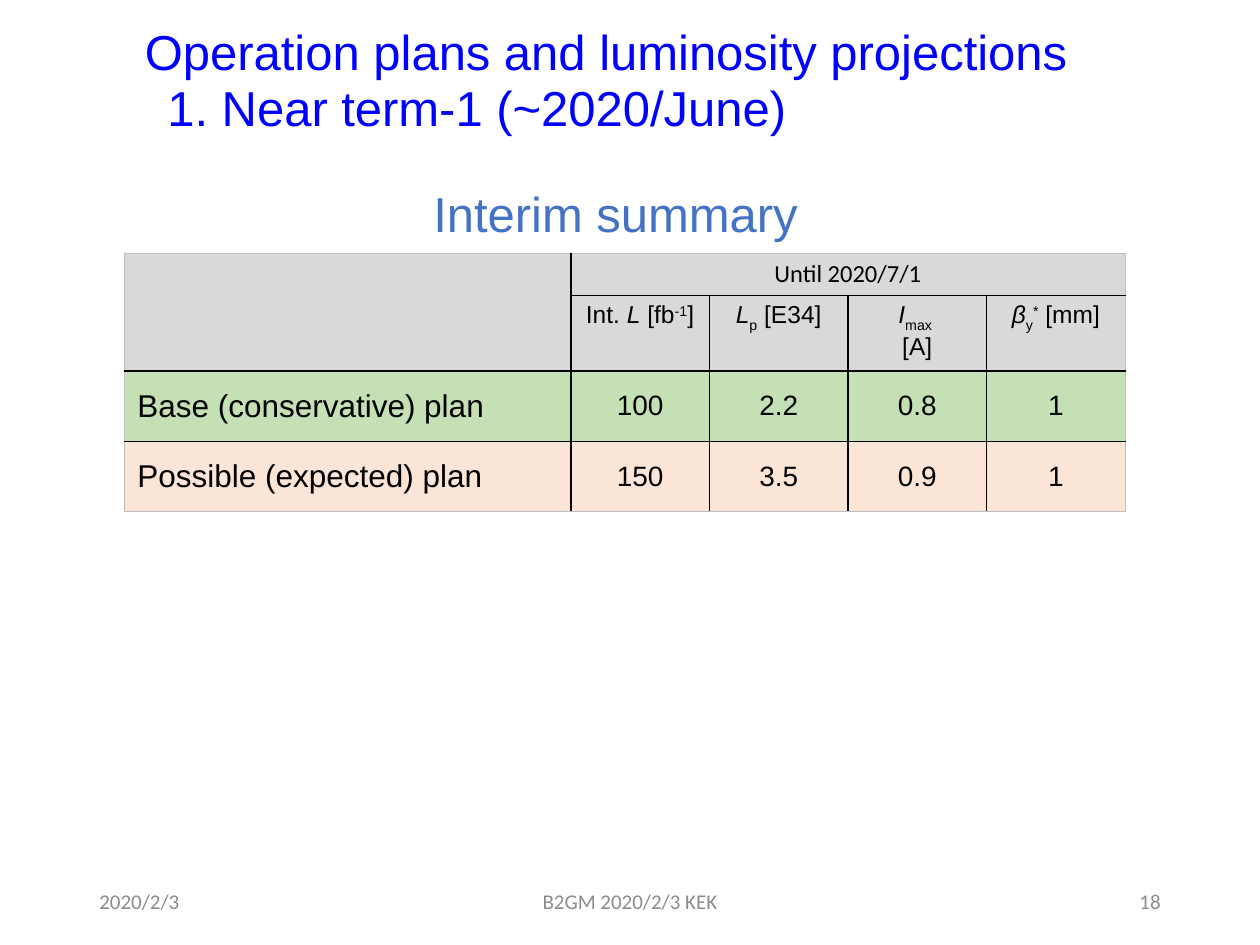
import pptx
import pptx.dml.color
import pptx.enum.text
import pptx.oxml
import pptx.oxml.ns
import pptx.util
from pptx.util import Inches

RGB = pptx.dml.color.RGBColor
ALIGN = pptx.enum.text.PP_ALIGN
ANCHOR = pptx.enum.text.MSO_ANCHOR

BLUE = RGB(0x00, 0x00, 0xFF)
STEEL = RGB(0x44, 0x72, 0xC4)
BLACK = RGB(0x00, 0x00, 0x00)
MUTED = RGB(0x8C, 0x8C, 0x8C)
EDGE = RGB(0xBF, 0xBF, 0xBF)
HEAD = RGB(0xD9, 0xD9, 0xD9)
GREEN = RGB(0xC5, 0xE0, 0xB4)
PEACH = RGB(0xFB, 0xE5, 0xD6)

SUB, SUP = -25000, 30000

# Each heading is a list of paragraphs; each paragraph a list of (text, style).
HEADS = [
    [[("Int. ", None), ("L", "i"), (" [fb", None), ("-1", SUP), ("]", None)]],
    [[("L", "i"), ("p", SUB), (" [E34]", None)]],
    [[("I", "i"), ("max ", SUB)], [("[A]", None)]],
    [[("β", "i"), ("y", SUB), ("*", SUP), (" [mm]", None)]],
]
PLANS = [
    (GREEN, "Base (conservative) plan", ["100", "2.2", "0.8", "1"]),
    (PEACH, "Possible (expected) plan", ["150", "3.5", "0.9", "1"]),
]


class Deck:
    def __init__(self):
        self.prs = pptx.Presentation()
        self.prs.slide_width = Inches(10)
        self.prs.slide_height = Inches(7.5)
        self.slide = self.prs.slides.add_slide(self.prs.slide_layouts[5])

    def style(self, font, size, color, face="Arial"):
        font.name = face
        font.size = pptx.util.Pt(size)
        font.color.rgb = color

    def label(self, frame, text, size, color, face="Arial",
              align=ALIGN.LEFT, anchor=ANCHOR.TOP):
        frame.text = text
        frame.word_wrap = True
        frame.vertical_anchor = anchor
        para = frame.paragraphs[0]
        para.alignment = align
        self.style(para.runs[0].font, size, color, face)

    def title(self, text, left, top, width, height):
        shape = self.slide.shapes.title
        shape.left, shape.top = Inches(left), Inches(top)
        shape.width, shape.height = Inches(width), Inches(height)
        self.label(shape.text_frame, text, 28, BLUE)
        shape.text_frame.auto_size = pptx.enum.text.MSO_AUTO_SIZE.NONE

    def text(self, text, left, top, width, height, size, color, **look):
        box = self.slide.shapes.add_textbox(
            Inches(left), Inches(top), Inches(width), Inches(height))
        self.label(box.text_frame, text, size, color, **look)

    def table(self, left, top, cols, rows):
        frame = self.slide.shapes.add_table(
            len(rows), len(cols), Inches(left), Inches(top),
            Inches(sum(cols)), Inches(sum(rows)))
        grid = frame.table
        grid.first_row = grid.horz_banding = False
        for col, width in zip(grid.columns, cols):
            col.width = Inches(width)
        for row, height in zip(grid.rows, rows):
            row.height = Inches(height)
        return grid

    def cell(self, cell, text, size, face="Arial", align=ALIGN.CENTER,
             anchor=ANCHOR.MIDDLE):
        cell.text = text
        cell.vertical_anchor = anchor
        para = cell.text_frame.paragraphs[0]
        para.alignment = align
        self.style(para.runs[0].font, size, BLACK, face)

    def symbol(self, cell, paras):
        """Fill a cell with italic symbols and raised or lowered indices."""
        frame = cell.text_frame
        for num, parts in enumerate(paras):
            para = frame.add_paragraph() if num else frame.paragraphs[0]
            para.alignment = ALIGN.CENTER
            for text, mark in parts:
                run = para.add_run()
                run.text = text
                self.style(run.font, 14, BLACK)
                if mark == "i":
                    run.font.italic = True
                elif mark:
                    run._r.get_or_add_rPr().set("baseline", str(mark))

    def rule(self, grid, fills):
        """Draw black inner and pale outer lines, then fill each row."""
        last_row, last_col = len(grid.rows), len(grid.columns)
        for r, fill in enumerate(fills):
            for c in range(last_col):
                cell = grid.cell(r, c)
                if not cell.is_spanned:
                    outer = {
                        "L": c == 0, "R": c + cell.span_width == last_col,
                        "T": r == 0, "B": r + cell.span_height == last_row}
                    for side, edge in outer.items():
                        self.line(cell, side, EDGE if edge else BLACK,
                                  0.5 if edge else 1)
                cell.fill.solid()
                cell.fill.fore_color.rgb = fill

    def line(self, cell, side, color, width):
        space = pptx.oxml.ns.nsdecls("a")
        cell._tc.get_or_add_tcPr().append(pptx.oxml.parse_xml(
            f'<a:ln{side} {space} w="{pptx.util.Pt(width)}"><a:solidFill>'
            f'<a:srgbClr val="{color}"/></a:solidFill></a:ln{side}>'))


def main():
    deck = Deck()
    deck.title("Operation plans and luminosity projections",
               1.05, 0.12, 7.65, 0.57)
    deck.text("1. Near term-1 (~2020/June)", 1.23, 0.57, 7.27, 0.57, 28, BLUE)
    deck.text("Interim summary", 3.34, 1.41, 3.61, 0.57, 28, STEEL)

    grid = deck.table(0.99, 2.01, [3.54] + [1.1] * 4, [0.33] + [0.56] * 3)
    grid.cell(0, 0).merge(grid.cell(1, 0))
    grid.cell(0, 1).merge(grid.cell(0, 4))
    deck.rule(grid, [HEAD, HEAD] + [plan[0] for plan in PLANS])
    deck.cell(grid.cell(0, 1), "Until 2020/7/1", 14, "Calibri",
              anchor=ANCHOR.TOP)
    for c, paras in enumerate(HEADS, 1):
        deck.symbol(grid.cell(1, c), paras)
    for r, (_, name, values) in enumerate(PLANS, 2):
        deck.cell(grid.cell(r, 0), name, 18, align=ALIGN.LEFT)
        for c, value in enumerate(values, 1):
            deck.cell(grid.cell(r, c), value, 16)

    for text, left, width, align in [
            ("2020/2/3", 0.69, 2.25, ALIGN.LEFT),
            ("B2GM 2020/2/3 KEK", 3.31, 3.38, ALIGN.CENTER),
            ("18", 7.06, 2.25, ALIGN.RIGHT)]:
        deck.text(text, left, 6.95, width, 0.4, 12, MUTED, face="Calibri",
                  align=align, anchor=ANCHOR.MIDDLE)
    deck.prs.save("out.pptx")


if __name__ == "__main__":
    main()
